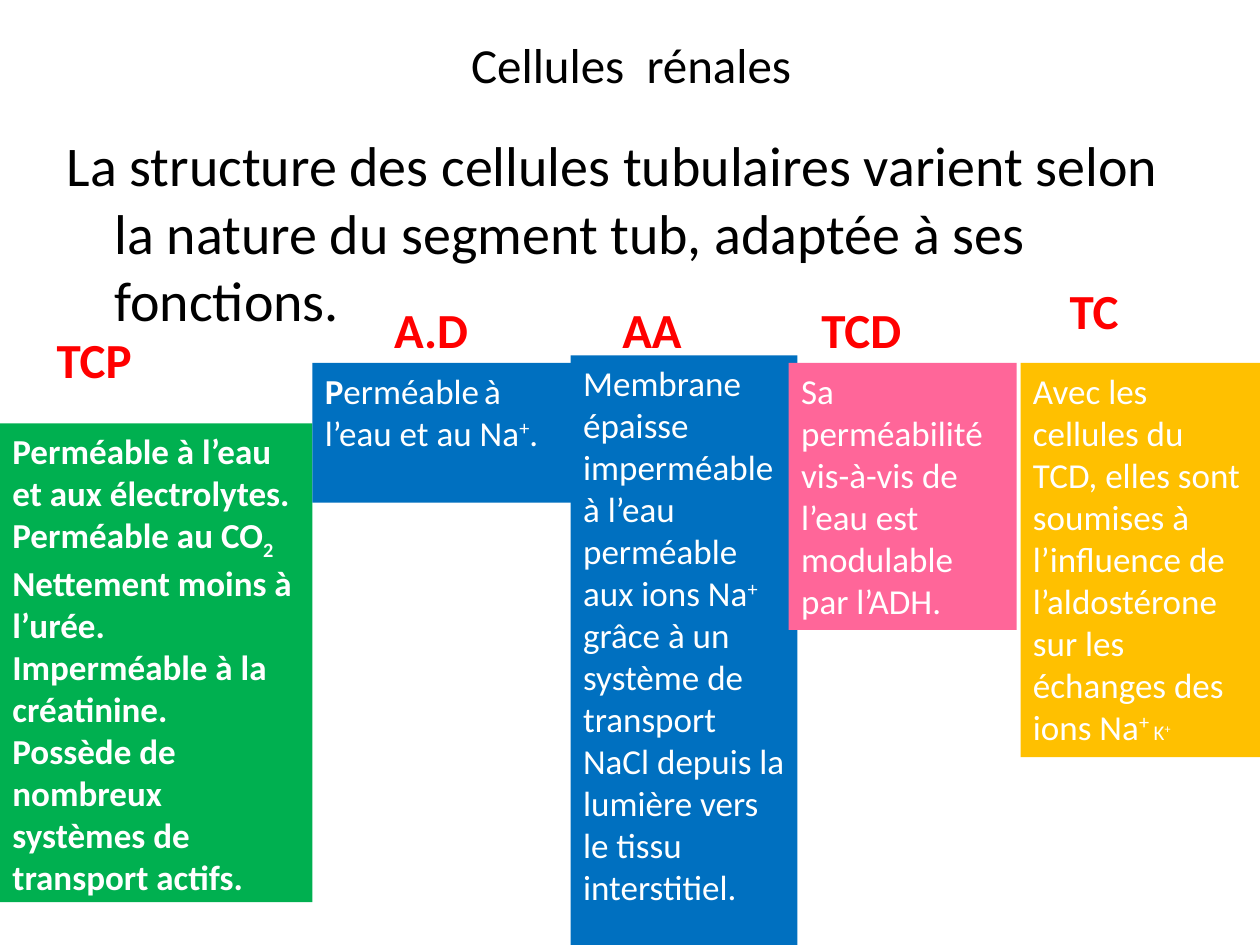
"""Build a slide comparing the kidney tubule cells segment by segment."""
from dataclasses import dataclass

from pptx import Presentation
from pptx import util as u
from pptx.dml.color import RGBColor
from pptx.enum import shapes, text

BLACK = RGBColor(0x00, 0x00, 0x00)
WHITE = RGBColor(0xFF, 0xFF, 0xFF)
RED = RGBColor(0xFF, 0x00, 0x00)
GREEN = RGBColor(0x00, 0xB0, 0x50)
BLUE = RGBColor(0x00, 0x70, 0xC0)
PINK = RGBColor(0xFF, 0x66, 0x99)
GOLD = RGBColor(0xFF, 0xC0, 0x00)
FONT = "Calibri"
SUB, SUP = -25, 30


@dataclass(frozen=True)
class Run:
    words: str
    size: float = 20
    bold: bool = False
    base: int = 0
    color: RGBColor = WHITE


@dataclass(frozen=True)
class Box:
    left: float
    top: float
    width: float
    height: float

    def place(self) -> tuple:
        return tuple(map(u.Inches, (self.left, self.top, self.width, self.height)))


@dataclass(frozen=True)
class Part:
    name: str
    label: Box
    panel: Box
    fill: RGBColor
    paras: tuple


PARTS = (
    Part("TCP", Box(0.35, 2.57, 1.42, 0.57), Box(0, 3.36, 2.48, 3.8), GREEN, (
        (Run("Perméable à l’eau et aux électrolytes.", bold=True),),
        (Run("Perméable au CO", bold=True), Run("2", bold=True, base=SUB),
         Run(" Nettement moins à l’urée.", bold=True)),
        (Run("Imperméable à la créatinine.", bold=True),),
        (Run("Possède de nombreux systèmes de transport actifs.", bold=True),),
    )),
    Part("A.D", Box(3.03, 2.33, 1.02, 0.57), Box(2.48, 2.88, 2.13, 1.11), BLUE, (
        (Run("P", bold=True), Run("erméable"), Run(" ", 12),
         Run("à l’eau et au Na"), Run("+", base=SUP), Run(".")),
    )),
    Part("AA", Box(4.84, 2.33, 0.79, 0.57), Box(4.53, 2.82, 1.8, 4.68), BLUE, (
        (Run("Membrane épaisse imperméable à l’eau perméable aux ions Na"),
         Run("+", base=SUP),
         Run(" grâce à un système de transport NaCl depuis la lumière vers "
             "le tissu interstitiel.")),
    )),
    Part("TCD", Box(6.42, 2.33, 1.46, 0.57), Box(6.26, 2.88, 1.81, 2.12), PINK, (
        (Run("Sa perméabilité vis-à-vis de l’eau est modulable par l’ADH."),),
    )),
    Part("TC", Box(8.39, 2.18, 1.02, 0.57), Box(8.1, 2.88, 1.9, 3.13), GOLD, (
        (Run("Avec les cellules du TCD, elles sont soumises à l’influence de "
             "l’aldostérone sur les échanges des ions Na"),
         Run("+ ", base=SUP), Run("K", 12), Run("+", 12, base=SUP)),
    )),
)


def add_run(para, item: Run) -> None:
    """Append one styled run to a paragraph."""
    run = para.add_run()
    run.text = item.words
    font = run.font
    font.name, font.size, font.bold = FONT, u.Pt(item.size), item.bold
    font.color.rgb = item.color
    if item.base:
        run._r.get_or_add_rPr().set("baseline", str(item.base * 1000))


def write(frame, paras: tuple, align=text.PP_ALIGN.LEFT,
          anchor=text.MSO_ANCHOR.TOP) -> None:
    """Fill a text frame with paragraphs of runs."""
    frame.word_wrap = True
    frame.vertical_anchor = anchor
    for spot, runs in enumerate(paras):
        para = frame.add_paragraph() if spot else frame.paragraphs[0]
        para.alignment = align
        for item in runs:
            add_run(para, item)


def add_text(slide, box: Box, item: Run, **style):
    """Add a text box with one run and return its frame."""
    frame = slide.shapes.add_textbox(*box.place()).text_frame
    write(frame, ((item,),), **style)
    return frame


def add_panel(slide, part: Part) -> None:
    """Add the filled panel of one segment."""
    panel = slide.shapes.add_shape(shapes.MSO_SHAPE.RECTANGLE, *part.panel.place())
    panel.shadow.inherit = False
    panel.fill.solid()
    panel.fill.fore_color.rgb = part.fill
    panel.line.fill.background()
    write(panel.text_frame, part.paras)


def add_lead(slide) -> None:
    """Add the opening sentence with its hanging indent."""
    frame = add_text(slide, Box(0.43, 0.99, 9, 5.11),
                     Run("La structure des cellules tubulaires varient selon "
                         "la nature du segment tub, adaptée à ses ", 32, color=BLACK))
    para = frame.paragraphs[0]
    para.add_line_break()
    add_run(para, Run("fonctions.", 32, color=BLACK))
    para.space_before = u.Pt(6.4)
    props = para._p.get_or_add_pPr()
    props.set("marL", str(u.Inches(0.38)))
    props.set("indent", str(u.Inches(-0.38)))


def main() -> None:
    """Build and save the slide."""
    deck = Presentation()
    deck.slide_width, deck.slide_height = u.Inches(10), u.Inches(7.5)
    slide = deck.slides.add_slide(deck.slide_layouts[6])
    add_text(slide, Box(0.51, 0, 9, 1.01), Run("Cellules  rénales", 28, color=BLACK),
             align=text.PP_ALIGN.CENTER, anchor=text.MSO_ANCHOR.MIDDLE)
    add_lead(slide)
    for part in PARTS:
        add_text(slide, part.label, Run(part.name, 28, True, color=RED))
    for part in PARTS:
        add_panel(slide, part)
    deck.save("out.pptx")


if __name__ == "__main__":
    main()
